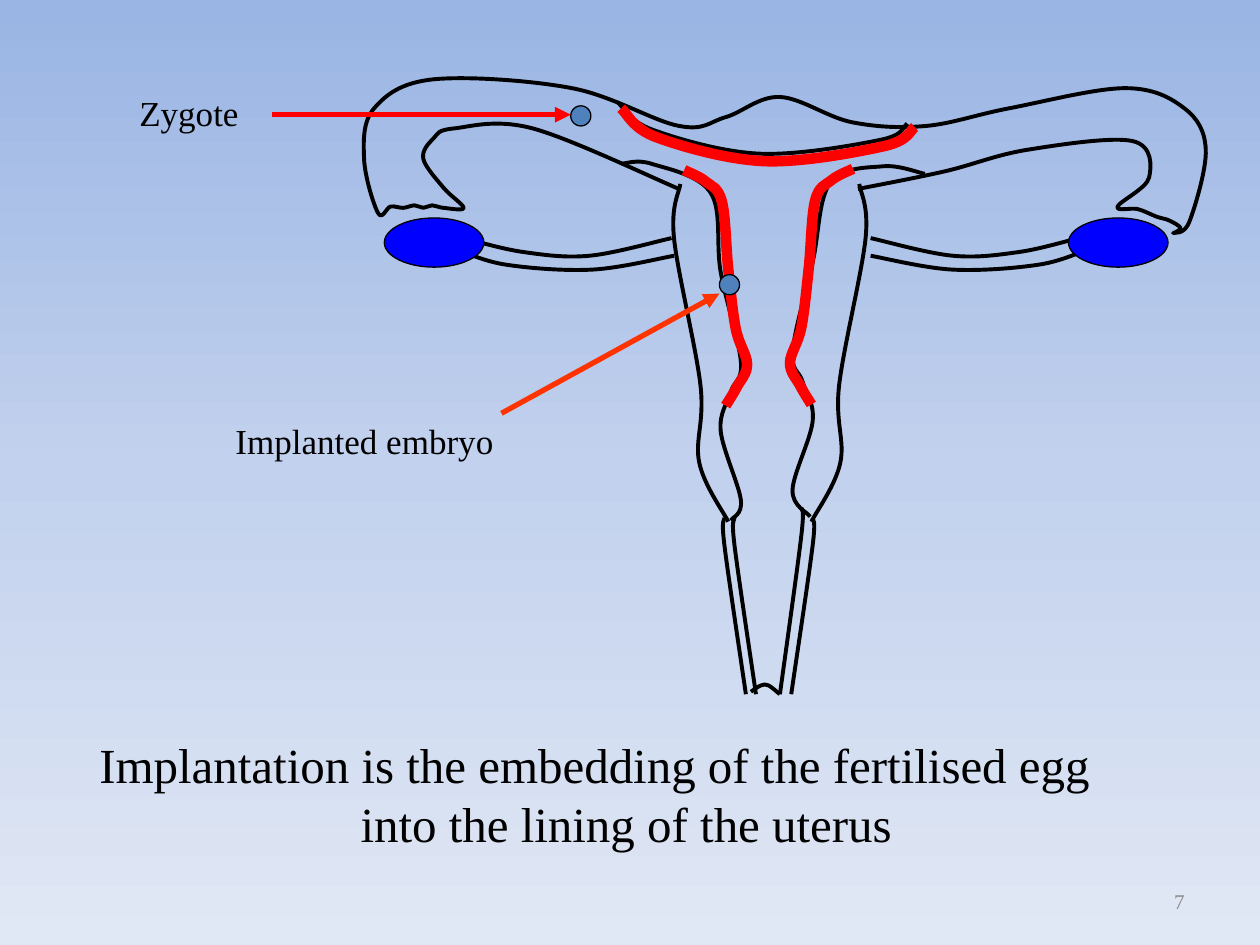
from copy import deepcopy

from pptx import Presentation
from pptx.dml.color import RGBColor
from pptx.enum.shapes import MSO_CONNECTOR, MSO_SHAPE
from pptx.enum.text import MSO_ANCHOR, MSO_AUTO_SIZE, PP_ALIGN
from pptx.oxml.ns import qn
from pptx.oxml.xmlchemy import OxmlElement
from pptx.util import Inches, Pt

COLORS = {"black": "000000", "lining": "FF0000", "ovary": "0000FF", "cell": "4F81BD",
          "embryo_arrow": "FF3300", "number": "8C8C8C"}
BACKGROUND = [(0, "9AB5E4"), (50, "C2D1ED"), (100, "E1E8F5")]
FONT = "Times New Roman"

# Points that each smooth curve passes through, in inches
TUBES = [
    (5.39, 1.5), (4.23, 1.02), (3.6, 1.02), (3.44, 1.1), (3.36, 1.26), (3.52, 1.49),
    (3.68, 1.65), (3.52, 1.65), (3.43, 1.63), (3.36, 1.65), (3.29, 1.63), (3.2, 1.65),
    (3.1, 1.64), (3, 1.69), (2.89, 1.26), (2.97, 0.86), (3.44, 0.63), (4.54, 0.7),
    (5.39, 1), (5.76, 0.93), (6.19, 0.77), (6.76, 0.97), (7.35, 1), (8.01, 0.86),
    (8.93, 0.7), (9.4, 0.86), (9.57, 1.19), (9.44, 1.76), (9.31, 1.85), (9.37, 1.81),
    (9.28, 1.75), (9.18, 1.72), (9.03, 1.66), (8.87, 1.64), (9.12, 1.41), (8.99, 1.12),
    (8.15, 1.19), (7.5, 1.36), (6.81, 1.5)]
LEFT_INNER_WALL = [(5.8, 4.13), (5.88, 3.97), (5.72, 3.42), (5.8, 3.11), (5.88, 2.87),
                   (5.72, 2.16), (5.64, 1.53), (5.17, 1.3), (4.93, 1.3)]
RIGHT_INNER_WALL = [(6.43, 4.1), (6.29, 3.89), (6.45, 3.34), (6.37, 3.03), (6.29, 2.79),
                    (6.45, 2.08), (6.59, 1.45), (7.01, 1.32), (7.34, 1.38)]
TOP_WALL = [(4.9, 0.81), (5.18, 1.03), (6.03, 1.22), (6.99, 1.11), (7.2, 0.98)]
TOP_LINING = [(4.93, 0.86), (5.21, 1.09), (6.07, 1.28), (7.02, 1.16), (7.26, 1.01)]
OUTER_WALL = [(5.78, 4.14), (5.55, 3.67), (5.56, 3.06), (5.35, 1.89), (5.4, 1.46)]
UPPER_LIGAMENT = [(5.33, 1.89), (4.68, 2.03), (4.15, 2), (3.68, 1.89)]
LOWER_LIGAMENT = [(5.35, 2.03), (4.7, 2.14), (4.01, 2.1), (3.6, 1.97)]
VAGINA_OUTER = [(5.92, 5.51), (5.75, 4.33), (5.75, 4.11)]
VAGINA_LEFT_INNER = [(6, 5.51), (5.83, 4.33), (5.83, 4.11)]
VAGINA_RIGHT_INNER = [(6.19, 5.51), (6.36, 4.25), (6.36, 4.03)]
VAGINA_OPENING = [(5.96, 5.49), (6.04, 5.44), (6.1, 5.44), (6.19, 5.51)]
SIDE_LINING = [(5.76, 3.22), (5.85, 3.07), (5.93, 2.89), (5.84, 2.61), (5.78, 2.13),
               (5.73, 1.6), (5.6, 1.44), (5.43, 1.35)]

# Curves drawn on both sides: points, mirror axis x, vertical shift of the right one
PAIRED_WALLS = [(OUTER_WALL, 6.11, 0), (UPPER_LIGAMENT, 6.12, 0),
                (LOWER_LIGAMENT, 6.13, 0), (VAGINA_OUTER, 6.1, 0)]
SINGLE_WALLS = [TUBES, LEFT_INNER_WALL, RIGHT_INNER_WALL, TOP_WALL, VAGINA_LEFT_INNER,
                VAGINA_RIGHT_INNER, VAGINA_OPENING]

# left, top, width, height, colour
OVALS = [(3.05, 1.73, 0.79, 0.39, "ovary"), (8.48, 1.73, 0.79, 0.39, "ovary"),
         (4.53, 0.84, 0.16, 0.16, "cell"), (5.71, 2.18, 0.16, 0.16, "cell")]
ARROWS = [((2.16, 0.91), (4.53, 0.91), "lining"),
          ((3.98, 3.28), (5.71, 2.33), "embryo_arrow")]
TEXTS = [
    ("Implantation is the embedding of the fertilised egg into the lining of the uterus",
     dict(box=(0.47, 5.78, 8.5, 1.04), size=28, align=PP_ALIGN.CENTER, before=50, hang=0.5)),
    ("Zygote", dict(box=(0.75, 0.68, 1.5, 0.43), align=PP_ALIGN.CENTER, before=50)),
    ("Implanted embryo", dict(box=(1.77, 3.28, 2.68, 0.43), before=50)),
    ("7", dict(box=(7.17, 6.95, 2.33, 0.4), size=12, align=PP_ALIGN.RIGHT, color="number",
               anchor=MSO_ANCHOR.MIDDLE, grow=False)),
]


def rgb(name):
    return RGBColor.from_string(COLORS[name])


def set_background(s):
    fill = s.background.fill
    fill.gradient()
    fill.gradient_angle = 270
    stops = s.background._cSld.find(".//" + qn("a:gsLst"))
    stops.insert(1, deepcopy(stops[0]))
    for stop, (position, color) in zip(fill.gradient_stops, BACKGROUND):
        stop.position = position / 100
        stop.color.rgb = RGBColor.from_string(color)


def mirror(points, axis, dy):
    return [(2 * axis - x, y + dy) for x, y in points]


def bezier_points(points):
    """Return two controls and an end point for each span of a smooth curve."""
    last = len(points) - 1

    def tangent(i):
        before, after = points[max(i - 1, 0)], points[min(i + 1, last)]
        return [(b - a) / 6 for a, b in zip(before, after)]

    result = []
    for i in range(last):
        (x0, y0), (x1, y1) = points[i], points[i + 1]
        (dx0, dy0), (dx1, dy1) = tangent(i), tangent(i + 1)
        result += [(x0 + dx0, y0 + dy0), (x1 - dx1, y1 - dy1), (x1, y1)]
    return result


def add_curve(s, points, color="black", width=2.25):
    x, y = points[0]
    builder = s.shapes.build_freeform(Inches(x), Inches(y))
    builder.add_line_segments([(Inches(x), Inches(y)) for x, y in bezier_points(points)],
                              close=False)
    sp = builder.convert_to_shape()
    sp.shadow.inherit = False
    sp.fill.background()
    sp.line.color.rgb = rgb(color)
    sp.line.width = Pt(width)
    path = sp._element.find(".//" + qn("a:path"))
    segments = path.findall(qn("a:lnTo"))
    for i in range(0, len(segments), 3):
        curve = OxmlElement("a:cubicBezTo")
        for segment in segments[i:i + 3]:
            curve.append(segment[0])
            path.remove(segment)
        path.append(curve)


def add_oval(s, left, top, width, height, color):
    sp = s.shapes.add_shape(MSO_SHAPE.OVAL, Inches(left), Inches(top),
                            Inches(width), Inches(height))
    sp.shadow.inherit = False
    sp.fill.solid()
    sp.fill.fore_color.rgb = rgb(color)
    sp.line.color.rgb = rgb("black")
    sp.line.width = Pt(0.75)


def add_arrow(s, start, end, color):
    line = s.shapes.add_connector(MSO_CONNECTOR.STRAIGHT,
                                  *(Inches(v) for v in start + end))
    line.line.color.rgb = rgb(color)
    line.line.width = Pt(3)
    head = OxmlElement("a:tailEnd")
    head.set("type", "triangle")
    line.line._get_or_add_ln().append(head)
    line._element.spPr.append(OxmlElement("a:effectLst"))


def add_text(s, text, box, size=20, align=PP_ALIGN.LEFT, color="black",
             anchor=MSO_ANCHOR.TOP, before=0, hang=0, grow=True):
    tf = s.shapes.add_textbox(*(Inches(v) for v in box)).text_frame
    tf.word_wrap = True
    tf.vertical_anchor = anchor
    if grow:
        tf.auto_size = MSO_AUTO_SIZE.SHAPE_TO_FIT_TEXT
    p = tf.paragraphs[0]
    p.alignment = align
    pPr = p._p.get_or_add_pPr()
    if hang:
        pPr.set("marL", str(Inches(hang)))
        pPr.set("indent", str(-Inches(hang)))
    if before:
        spacing, percent = OxmlElement("a:spcBef"), OxmlElement("a:spcPct")
        percent.set("val", str(before * 1000))
        spacing.append(percent)
        pPr.append(spacing)
    r = p.add_run()
    r.text = text
    r.font.name = FONT
    r.font.size = Pt(size)
    r.font.color.rgb = rgb(color)


def main():
    prs = Presentation()
    prs.slide_width, prs.slide_height = Inches(10), Inches(7.5)
    s = prs.slides.add_slide(prs.slide_layouts[6])
    set_background(s)
    for points, axis, dy in PAIRED_WALLS:
        add_curve(s, points)
        add_curve(s, mirror(points, axis, dy))
    for points in SINGLE_WALLS:
        add_curve(s, points)
    for points in (SIDE_LINING, mirror(SIDE_LINING, 6.1, -0.01), TOP_LINING):
        add_curve(s, points, color="lining", width=6)
    for oval in OVALS:
        add_oval(s, *oval)
    for arrow in ARROWS:
        add_arrow(s, *arrow)
    for text, style in TEXTS:
        add_text(s, text, **style)
    prs.save("out.pptx")


if __name__ == "__main__":
    main()
